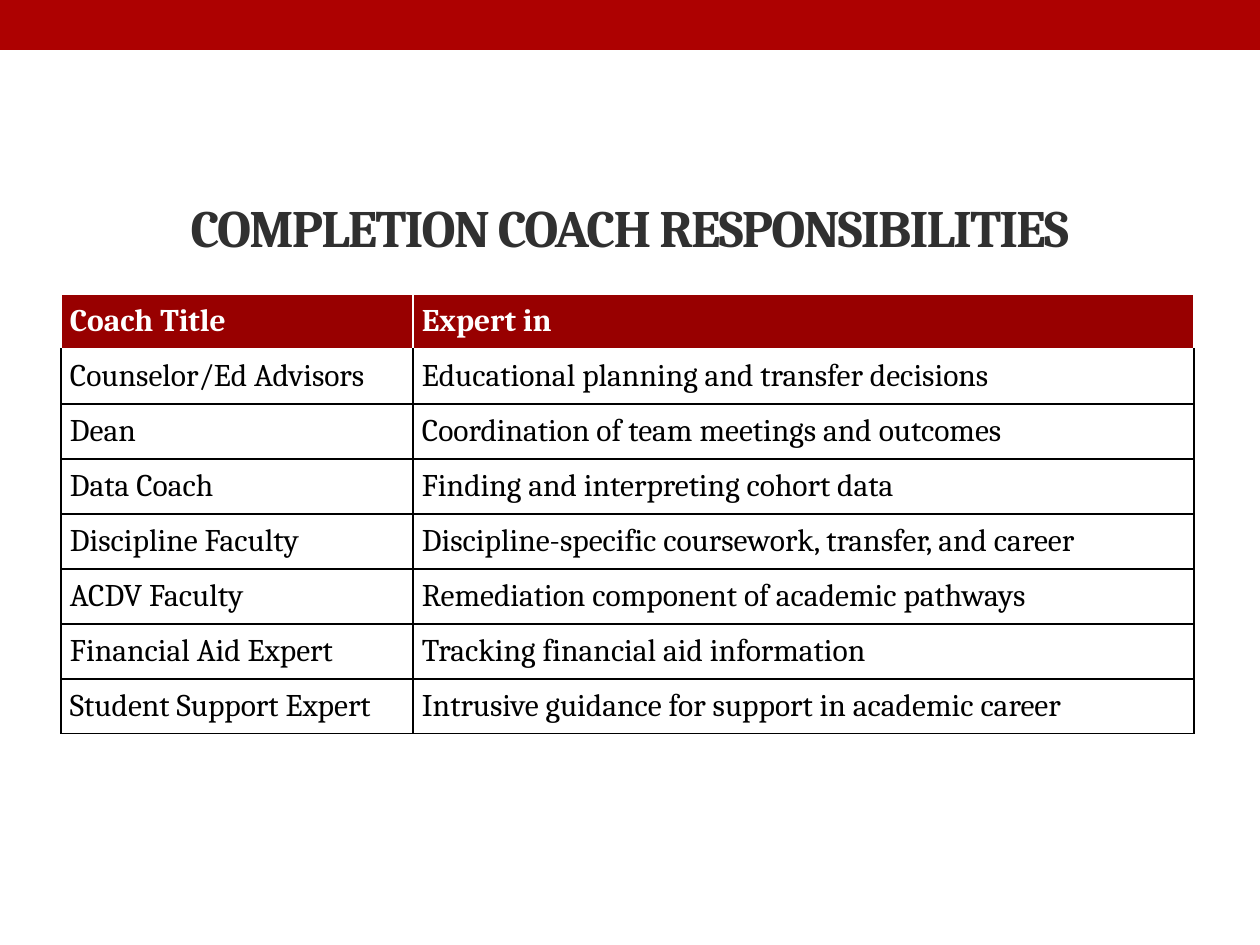
from pptx import Presentation
from pptx.dml.color import RGBColor
from pptx.enum.shapes import MSO_SHAPE
from pptx.enum.text import MSO_ANCHOR, PP_ALIGN
from pptx.oxml.ns import qn
from pptx.util import Pt
from lxml.etree import SubElement

TITLE = "COMPLETION COACH RESPONSIBILITIES"
ROWS = [
    ("Coach Title", "Expert in"),
    ("Counselor/Ed Advisors", "Educational planning and transfer decisions"),
    ("Dean", "Coordination of team meetings and outcomes"),
    ("Data Coach", "Finding and interpreting cohort data"),
    ("Discipline Faculty", "Discipline-specific coursework, transfer, and career"),
    ("ACDV Faculty", "Remediation component of academic pathways"),
    ("Financial Aid Expert", "Tracking financial aid information"),
    ("Student Support Expert", "Intrusive guidance for support in academic career"),
]
COLS = (352, 781)
ROW = 55
PAD = 9
PX = 914400 // 126

RED = RGBColor(0xAD, 0x01, 0x01)
DARK = RGBColor(0x98, 0x00, 0x00)
GRAY = RGBColor(0x30, 0x30, 0x30)
BLACK = RGBColor(0, 0, 0)
WHITE = RGBColor(0xFF, 0xFF, 0xFF)


def px(*vals):
    return [val * PX for val in vals]


def write(frame, text, size=18, color=BLACK, bold=False, align=PP_ALIGN.LEFT, gap=0):
    para = frame.paragraphs[0]
    para.alignment = align
    run = para.add_run()
    run.text = text
    font = run.font
    font.name, font.size, font.bold = "Cambria", Pt(size), bold
    font.color.rgb = color
    if gap:
        run._r.get_or_add_rPr().set("spc", str(gap))


def edge(cell, side, color, width):
    props = cell._tc.get_or_add_tcPr()
    line = SubElement(props, qn("a:" + side), w=str(Pt(width)))
    fill = SubElement(line, qn("a:solidFill"))
    SubElement(fill, qn("a:srgbClr"), val=str(color))


def style(cell, head, first):
    cell.margin_left = cell.margin_right = PAD * PX
    cell.margin_top = cell.margin_bottom = PAD * PX
    for side in ("lnL", "lnR", "lnT", "lnB"):
        white = head or (first and side == "lnT")
        edge(cell, side, WHITE if white else BLACK, 0.75 if white else 1)
    if head:
        cell.fill.solid()
        cell.fill.fore_color.rgb = DARK
    else:
        cell.fill.background()


def main():
    deck = Presentation()
    deck.slide_width, deck.slide_height = px(1260, 945)
    slide = deck.slides.add_slide(deck.slide_layouts[6])
    shapes = slide.shapes

    band = shapes.add_shape(MSO_SHAPE.RECTANGLE, *px(0, 0, 1260, 50))
    band.shadow.inherit = False
    band.fill.solid()
    band.fill.fore_color.rgb = RED
    band.line.fill.background()

    box = px(61, 294, sum(COLS), ROW * len(ROWS))
    table = shapes.add_table(len(ROWS), len(COLS), *box).table
    for col, width in zip(table.columns, COLS):
        col.width = width * PX
    for i, row in enumerate(ROWS):
        table.rows[i].height = ROW * PX
        for j, text in enumerate(row):
            cell = table.cell(i, j)
            head = i == 0
            style(cell, head, i == 1)
            write(cell.text_frame, text, color=WHITE if head else BLACK, bold=head)

    frame = shapes.add_textbox(*px(43, 179, 1174, 79)).text_frame
    frame.word_wrap = True
    frame.vertical_anchor = MSO_ANCHOR.BOTTOM
    frame.margin_top = frame.margin_bottom = 0
    write(frame, TITLE, size=30, color=GRAY, bold=True, align=PP_ALIGN.CENTER, gap=-100)

    deck.save("out.pptx")


if __name__ == "__main__":
    main()
